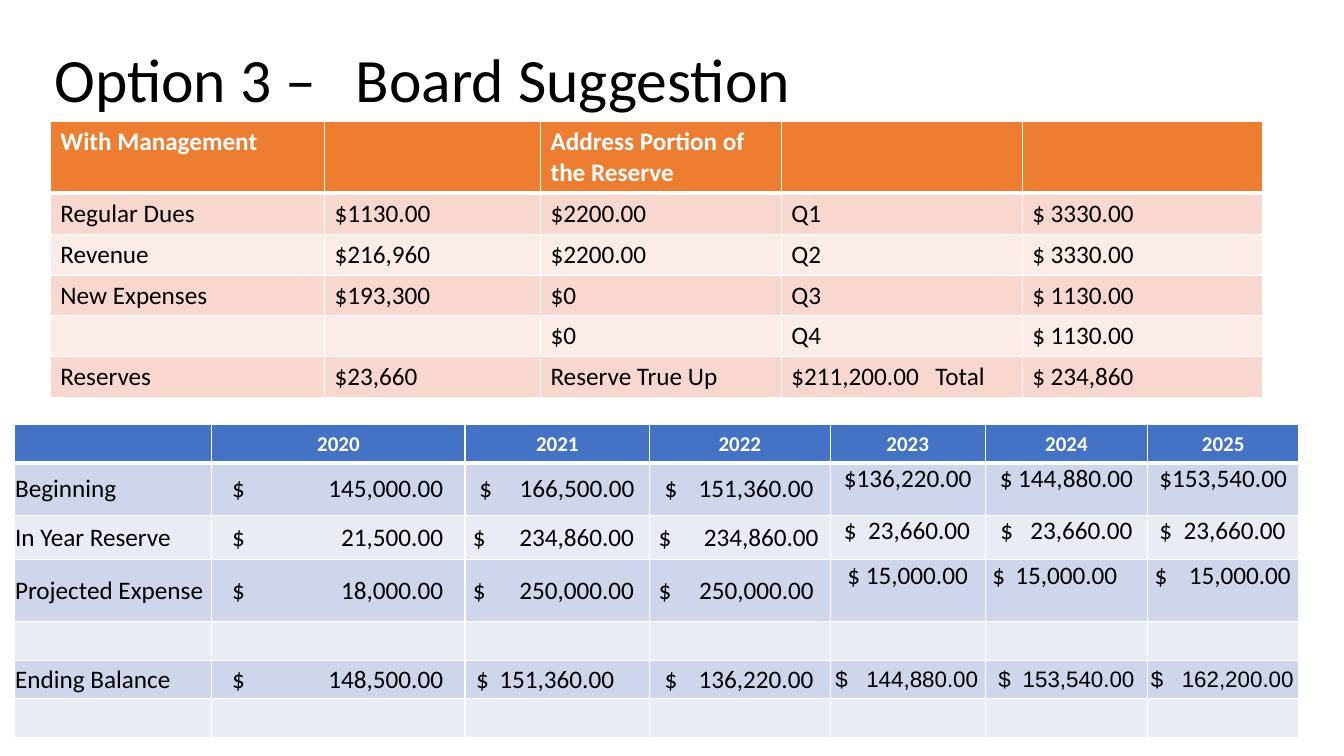
from lxml.etree import SubElement
from pptx import Presentation
from pptx.dml.color import RGBColor
from pptx.enum.text import MSO_ANCHOR as ANCHOR, PP_ALIGN as ALIGN
from pptx.oxml import parse_xml
from pptx.oxml.ns import nsdecls, qn
from pptx.util import Cm, Pt

BLACK, WHITE = "000000", "FFFFFF"
ORANGE = ("ED7D31", "F8D7CE", "FCECE8")  # header, odd rows, even rows
BLUE = ("4472C4", "CFD5EA", "E9EBF5")

DUES = [
    ["With Management", "", "Address Portion of the Reserve", "", ""],
    ["Regular Dues", "$1130.00", "$2200.00", "Q1", "$ 3330.00"],
    ["Revenue", "$216,960", "$2200.00", "Q2", "$ 3330.00"],
    ["New Expenses", "$193,300", "$0", "Q3", "$ 1130.00"],
    ["", "", "$0", "Q4", "$ 1130.00"],
    ["Reserves", "$23,660", "Reserve True Up", "$211,200.00\tTotal", "$ 234,860"],
]

# Spread amounts are (amount, inset of the dollar sign, width up to the last digit)
FORECAST = [
    ["", "2020", "2021", "2022", "2023", "2024", "2025"],
    ["Beginning", ("145,000.00", 0.51, 5.32), ("166,500.00", 0.36, 3.91),
     ("151,360.00", 0.38, 3.75), "$136,220.00", "$ 144,880.00", "$153,540.00"],
    ["In Year Reserve", ("21,500.00", 0.51, 5.32), ("234,860.00", 0.2, 4.06),
     ("234,860.00", 0.23, 4.03), ("23,660.00", 0.35, 3.18),
     ("23,660.00", 0.38, 3.33), ("23,660.00", 0.3, 3.18)],
    ["Projected Expense", ("18,000.00", 0.51, 5.32), ("250,000.00", 0.2, 4.06),
     ("250,000.00", 0.23, 3.91), "$ 15,000.00",
     ("15,000.00", 0.18, 3.15), ("15,000.00", 0.18, 3.43)],
    [""] * 7,
    ["Ending Balance", ("148,500.00", 0.51, 5.32), ("151,360.00", 0.28, 3.48),
     ("136,220.00", 0.38, 3.75), ("144,880.00", 0.13, 3.6),
     ("153,540.00", 0.33, 3.43), ("162,200.00", 0.08, 3.6)],
    [""] * 7,
]


def rgb(value):
    return RGBColor.from_string(value)


def write(tf, text, size=18, color=BLACK, bold=False, font="Calibri",
          align=ALIGN.LEFT, spacing=None, tab=None, tab_align="l"):
    """Fill the first paragraph; tab is a tab stop in centimetres."""
    p = tf.paragraphs[0]
    p.alignment = align
    if spacing:
        p.line_spacing = spacing
    if tab:
        stops = SubElement(p._p.get_or_add_pPr(), qn("a:tabLst"))
        SubElement(stops, qn("a:tab"), pos=str(int(Cm(tab))), algn=tab_align)
    r = p.add_run()
    r.text = text
    r.font.name, r.font.size, r.font.bold = font, Pt(size), bold
    r.font.color.rgb = rgb(color)


def style_cell(cell, fill, bottom):
    """Solid fill with white borders; bottom is the lower border in points."""
    cell.fill.solid()
    cell.fill.fore_color.rgb = rgb(fill)
    widths = {"lnL": 1, "lnR": 1, "lnT": 1, "lnB": bottom}
    for i, (tag, width) in enumerate(widths.items()):
        cell._tc.get_or_add_tcPr().insert(i, parse_xml(
            f'<a:{tag} {nsdecls("a")} w="{int(Pt(width))}"><a:solidFill>'
            f'<a:srgbClr val="{WHITE}"/></a:solidFill></a:{tag}>'))


def add_grid(s, x, y, widths, heights, palette):
    """Add a styled, empty table and return it."""
    tbl = s.shapes.add_table(len(heights), len(widths), Cm(x), Cm(y),
                             Cm(sum(widths)), Cm(sum(heights))).table
    for col, width in zip(tbl.columns, widths):
        col.width = Cm(width)
    for i, (row, height) in enumerate(zip(tbl.rows, heights)):
        row.height = Cm(height)
        fill = palette[0] if i == 0 else palette[1 if i % 2 else 2]
        for cell in row.cells:
            # The header's thick rule is shared with the row below it
            style_cell(cell, fill, 3 if i == 0 else 1)
    return tbl


def add_title(s, x, y, w, h):
    tf = s.shapes.add_textbox(Cm(x), Cm(y), Cm(w), Cm(h)).text_frame
    tf.word_wrap = True
    tf.vertical_anchor = ANCHOR.MIDDLE
    write(tf, "Option 3 –\tBoard Suggestion", size=44, spacing=0.9, tab=7.6)


def add_dues_table(s, x, y):
    tbl = add_grid(s, x, y, [6.91, 5.44] + [6.07] * 3, [1.8] + [1.03] * 5, ORANGE)
    for i, row in enumerate(DUES):
        for j, text in enumerate(row):
            if text:
                write(tbl.cell(i, j).text_frame, text, bold=i == 0,
                      color=BLACK if i else WHITE,
                      tab=3.63 if "\t" in text else None)


def add_forecast_table(s, x, y):
    tbl = add_grid(s, x, y, [4.98, 6.38, 4.65, 4.55, 3.91, 4.09, 3.81],
                   [0.97, 1.32, 1.12, 1.57, 0.97, 0.97, 0.97], BLUE)
    for i, row in enumerate(FORECAST):
        for j, value in enumerate(row):
            cell = tbl.cell(i, j)
            cell.margin_left = cell.margin_right = cell.margin_top = Cm(0.02)
            cell.margin_bottom = 0
            late = j >= 4  # 2023 onwards
            cell.vertical_anchor = ANCHOR.TOP if late and 1 <= i <= 3 else ANCHOR.MIDDLE
            arial = late and i == 5
            look = dict(size=16 if arial else 18, font="Arial" if arial else "Calibri")
            if i == 0:
                look.update(size=15, color=WHITE, bold=True)
            if isinstance(value, tuple):
                amount, inset, width = value
                cell.margin_left = Cm(inset)
                write(cell.text_frame, f"$\t{amount}", tab=width, tab_align="r", **look)
            elif value:
                write(cell.text_frame, value,
                      align=ALIGN.CENTER if j else ALIGN.LEFT, **look)


def main():
    prs = Presentation()
    prs.slide_width, prs.slide_height = Cm(33.87), Cm(19.05)
    s = prs.slides.add_slide(prs.slide_layouts[6])
    add_title(s, 1.12, 0.23, 29.21, 3.68)
    add_forecast_table(s, 0.36, 10.69)
    add_dues_table(s, 1.27, 3.07)
    prs.save("out.pptx")


if __name__ == "__main__":
    main()
